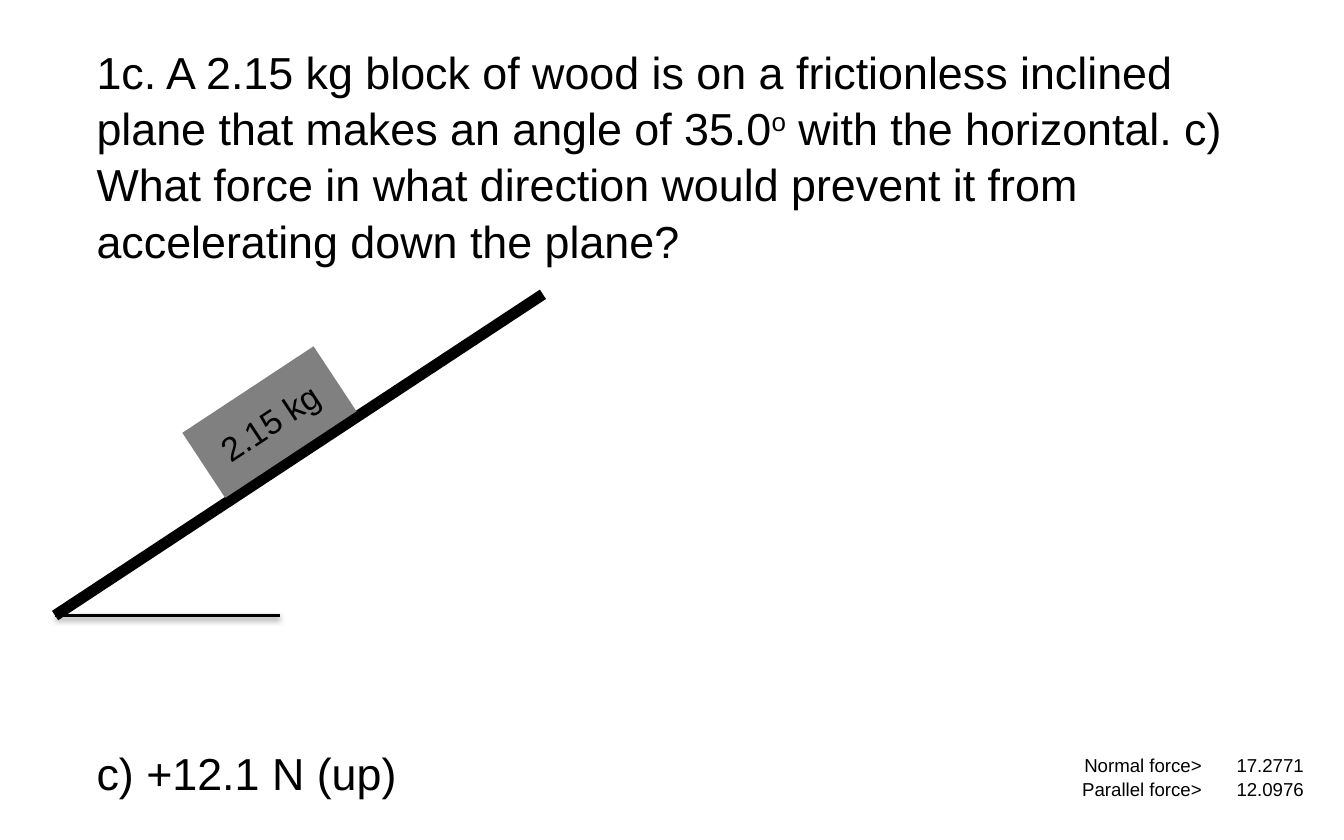
from typing import NamedTuple

from lxml import etree
from pptx import Presentation
from pptx.dml.color import RGBColor
from pptx.enum.shapes import MSO_CONNECTOR as Connector, MSO_SHAPE as Preset
from pptx.enum.text import MSO_ANCHOR as Anchor, PP_ALIGN as Align
from pptx.oxml.ns import qn
from pptx.util import Inches, Pt

BLACK = "000000"
GRAY = "808080"


class TextRun(NamedTuple):
    text: str
    baseline: int = 0


class TextBlock(NamedTuple):
    left: float
    top: float
    width: float
    height: float
    wrap: bool
    runs: list[TextRun]


class Line(NamedTuple):
    start: tuple[float, float]
    end: tuple[float, float]
    weight: float
    shadow: bool = False


class Force(NamedTuple):
    label: str
    value: str


BLOCKS = [
    TextBlock(0.62, 0.26, 8.65, 2.12, True, [
        TextRun("1c. A 2.15 kg block of wood is on a frictionless inclined plane "
                "that makes an angle of 35.0"),
        TextRun("o", 30000),
        TextRun(" with the horizontal. c) What force in what direction would "
                "prevent it from accelerating down the plane?"),
    ]),
    TextBlock(0.62, 5.48, 2.46, 0.5, False, [TextRun("c) +12.1 N (up)")]),
]
CORNER = (0.41, 4.58)
INCLINE = Line(CORNER, (4.04, 2.19), 6)
GROUND = Line(CORNER, (2.08, 4.58), 2, shadow=True)
FORCES = [Force("Normal force>", "17.2771"), Force("Parallel force>", "12.0976")]


def color(value: str) -> RGBColor:
    return RGBColor.from_string(value)


def style(paragraph, size: float, alignment=Align.LEFT) -> None:
    paragraph.alignment = alignment
    paragraph.font.size = Pt(size)
    paragraph.font.name = "Arial"
    paragraph.font.color.rgb = color(BLACK)


def add_text(slide, block: TextBlock) -> None:
    shape = slide.shapes.add_textbox(
        Inches(block.left), Inches(block.top), Inches(block.width), Inches(block.height))
    shape.text_frame.word_wrap = block.wrap
    paragraph = shape.text_frame.paragraphs[0]
    paragraph.line_spacing = 1.05
    for text_run in block.runs:
        run = paragraph.add_run()
        run.text = text_run.text
        if text_run.baseline:
            run.font._element.set("baseline", str(text_run.baseline))
    style(paragraph, 24)


def add_line(slide, line: Line) -> None:
    connector = slide.shapes.add_connector(
        Connector.STRAIGHT, *map(Inches, line.start + line.end))
    connector.line.color.rgb = color(BLACK)
    connector.line.width = Pt(line.weight)
    properties = connector._element.spPr
    effects = etree.SubElement(properties, qn("a:effectLst"))
    if line.shadow:
        shadow = etree.SubElement(
            effects, qn("a:outerShdw"), blurRad=str(Pt(3.1)), dist=str(Pt(1.6)),
            dir="5400000", rotWithShape="0")
        shade = etree.SubElement(shadow, qn("a:srgbClr"), val=BLACK)
        etree.SubElement(shade, qn("a:alpha"), val="38000")


def add_wood_block(slide) -> None:
    shape = slide.shapes.add_shape(
        Preset.RECTANGLE, Inches(1.42), Inches(2.85), Inches(1.17), Inches(0.58))
    shape.rotation = 326.6
    shape.shadow.inherit = False
    shape.fill.solid()
    shape.fill.fore_color.rgb = color(GRAY)
    shape.line.fill.background()
    frame = shape.text_frame
    frame.word_wrap = False
    frame.vertical_anchor = Anchor.MIDDLE
    paragraph = frame.paragraphs[0]
    paragraph.text = "2.15 kg"
    style(paragraph, 18, Align.CENTER)


def add_force_table(slide, forces: list[Force]) -> None:
    widths = (2.38, 0.76)
    row_height = 0.18
    table = slide.shapes.add_table(
        len(forces), len(widths), Inches(6.57), Inches(5.6),
        Inches(sum(widths)), Inches(row_height * len(forces))).table
    table.first_row = False
    table.horz_banding = False
    for column, width in zip(table.columns, widths):
        column.width = Inches(width)
    for row, force in zip(table.rows, forces):
        row.height = Inches(row_height)
        for cell, text in zip(row.cells, force):
            cell.fill.background()
            cell.vertical_anchor = Anchor.BOTTOM
            cell.margin_left = cell.margin_right = cell.margin_top = Inches(0.01)
            cell.margin_bottom = Inches(0)
            paragraph = cell.text_frame.paragraphs[0]
            paragraph.text = text
            style(paragraph, 10, Align.RIGHT)
            for side in ("a:lnB", "a:lnT", "a:lnR", "a:lnL"):
                border = etree.Element(qn(side), w="0")
                etree.SubElement(border, qn("a:noFill"))
                cell._tc.tcPr.insert(0, border)


def main() -> None:
    presentation = Presentation()
    presentation.slide_width = Inches(10)
    presentation.slide_height = Inches(6.25)
    slide = presentation.slides.add_slide(presentation.slide_layouts[6])
    for block in BLOCKS:
        add_text(slide, block)
    add_force_table(slide, FORCES)
    add_line(slide, INCLINE)
    add_wood_block(slide)
    add_line(slide, GROUND)
    presentation.save("out.pptx")


if __name__ == "__main__":
    main()
